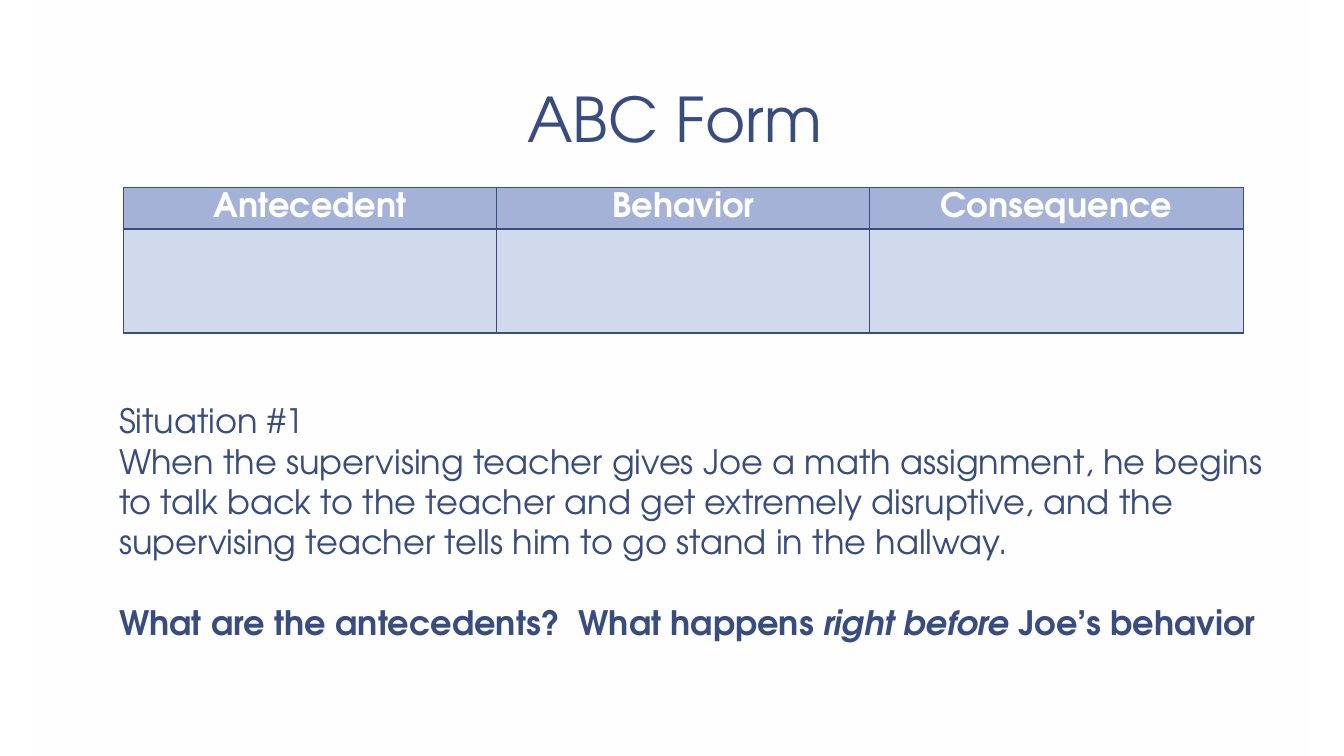
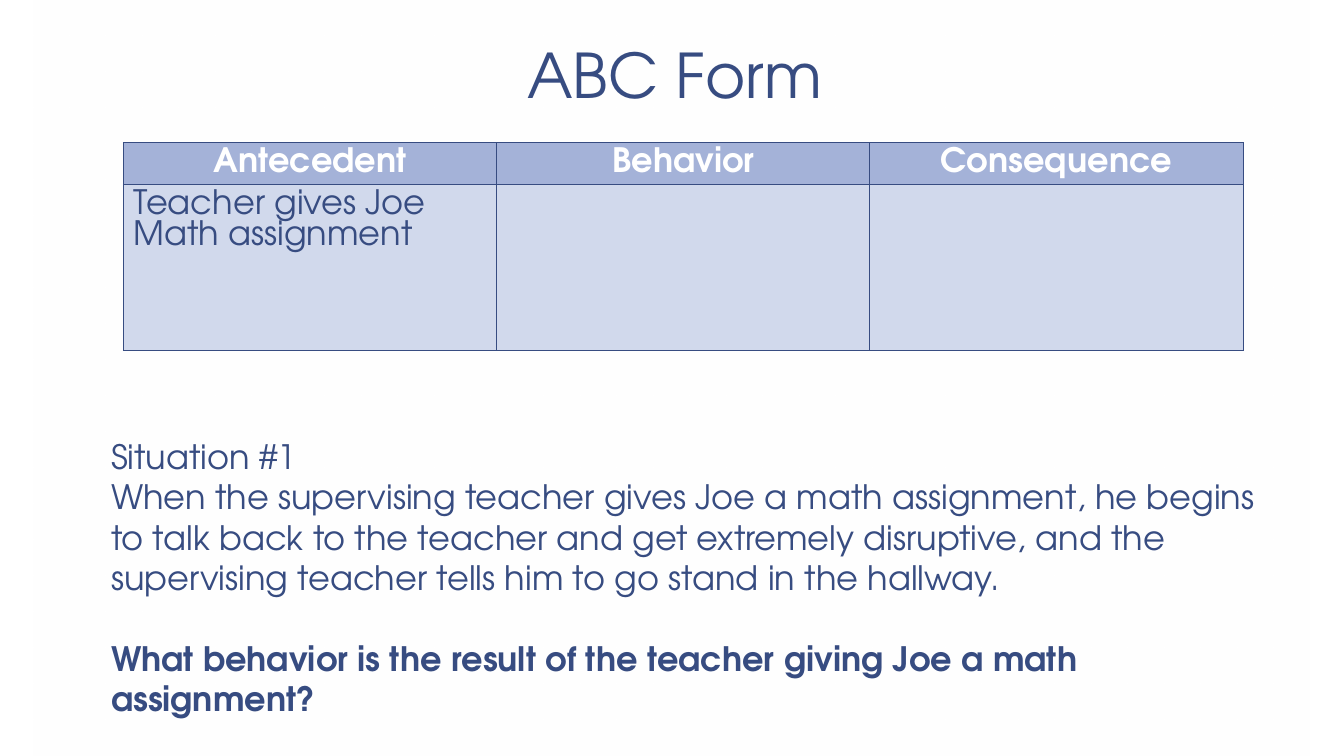
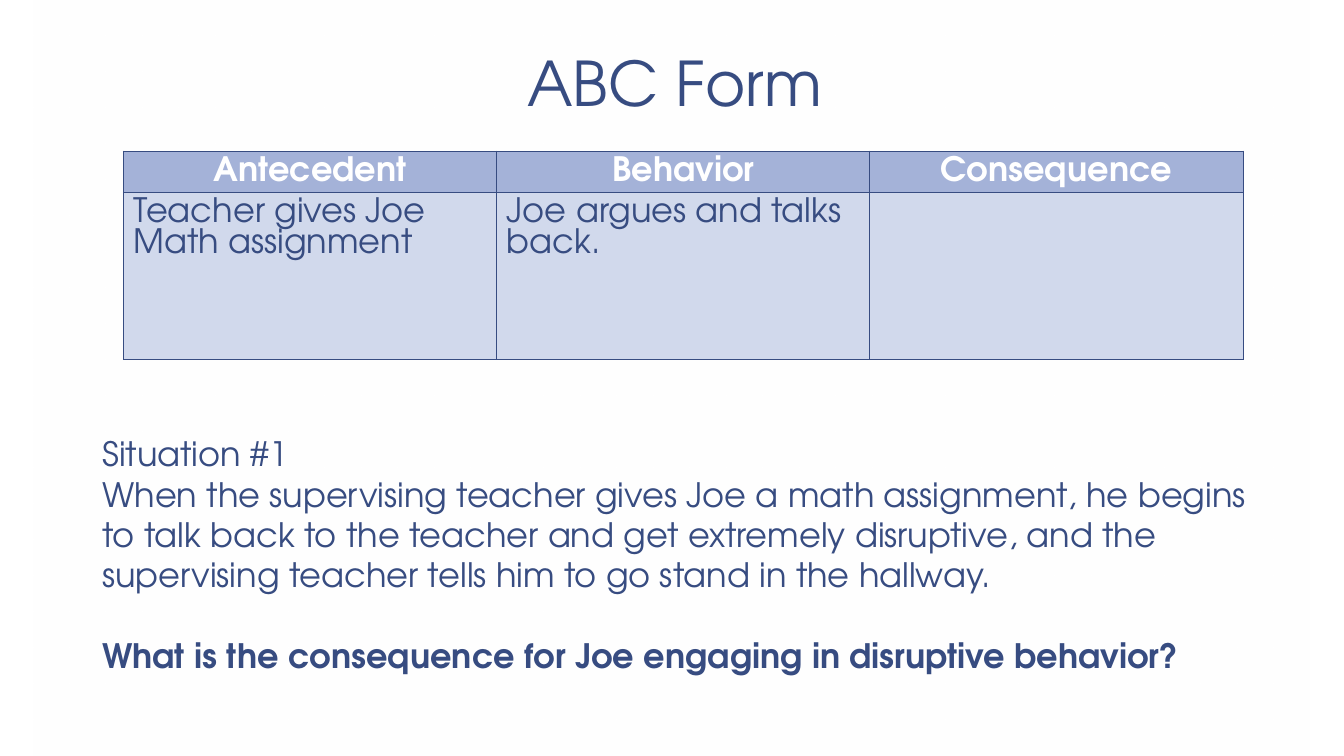
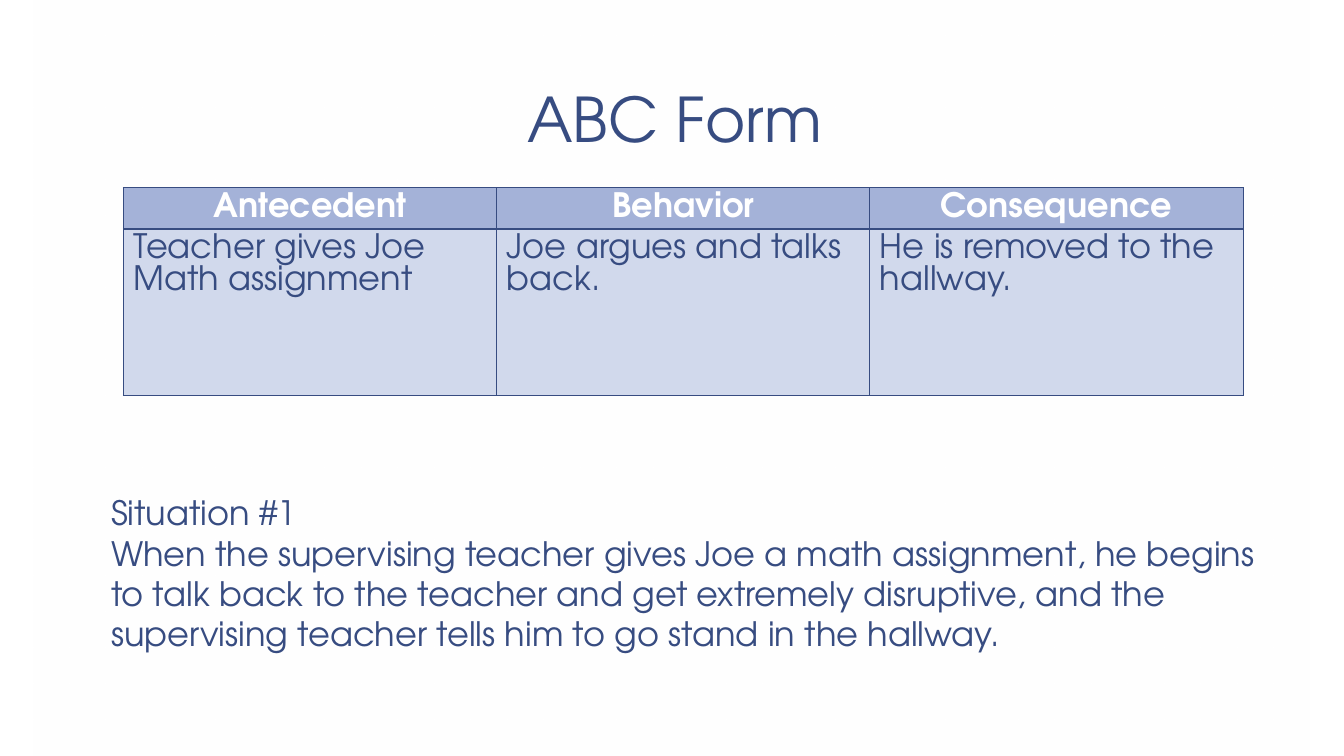
"""Build four slides that fill in an antecedent-behavior-consequence form."""
from lxml import etree
from pptx import Presentation
from pptx.dml.color import RGBColor
from pptx.enum.shapes import MSO_SHAPE
from pptx.enum.text import MSO_ANCHOR, PP_ALIGN
from pptx.oxml.ns import qn
from pptx.util import Cm, Pt

CENTER = PP_ALIGN.CENTER
LEFT = PP_ALIGN.LEFT
BOTTOM = MSO_ANCHOR.BOTTOM
RECTANGLE = MSO_SHAPE.RECTANGLE

FONT = "TeX Gyre Adventor"
NAVY, WHITE = "374C81", "FFFFFF"
HEADER_FILL, ANSWER_FILL = "A4B2D8", "D1D9EC"

PAGE_WIDTH, PAGE_HEIGHT = 33.87, 19.05
PANEL_LEFT, PANEL_WIDTH = 0.84, 32.16
FORM_LEFT, FORM_WIDTH = 3.11, 28.22
TITLE_TOP, TITLE_GAP = 0.21, 0.63
HEADER_HEIGHT = 1.04
STORY_WIDTH, STORY_HEIGHT = 30.05, 8.46

HEADINGS = ["Antecedent", "Behavior", "Consequence"]
ANSWERS = [
    ["Teacher gives Joe", "Math assignment"],
    ["Joe argues and talks back."],
    ["He is removed to the hallway."],
]
STORY = [
    "Situation #1",
    "When the supervising teacher gives Joe a math assignment, he begins to talk "
    "back to the teacher and get extremely disruptive, and the supervising teacher "
    "tells him to go stand in the hallway.",
]
PAGES = [
    {
        "title_height": 3.89, "answer_height": 2.62, "answered": 0,
        "story_at": (2.75, 9.96),
        "question": [
            ("What are the antecedents?  What happens ", False),
            ("right before", True),
            (" Joe’s behavior", False),
        ],
    },
    {
        "title_height": 2.76, "answer_height": 4.2, "answered": 1,
        "story_at": (2.55, 10.86),
        "question": [
            ("What behavior is the result of the teacher giving Joe a math "
             "assignment?", False),
        ],
    },
    {
        "title_height": 2.97, "answer_height": 4.2, "answered": 2,
        "story_at": (2.33, 10.79),
        "question": [
            ("What is the consequence for Joe engaging in disruptive behavior?", False),
        ],
    },
    {
        "title_height": 3.89, "answer_height": 4.2, "answered": 3,
        "story_at": (2.55, 12.28),
        "question": [],
    },
]


def color(value):
    """Turn a hex string into a colour."""
    return RGBColor.from_string(value)


def add_span(para, text, size=24, ink=NAVY, bold=False, italic=False):
    """Add one formatted run to a paragraph."""
    span = para.add_run()
    span.text = text
    span.font.name = FONT
    span.font.size = Pt(size)
    span.font.bold = bold
    span.font.italic = italic
    span.font.color.rgb = color(ink)


def next_para(frame, index):
    """Return the first paragraph of a frame, or add a further one."""
    return frame.add_paragraph() if index else frame.paragraphs[0]


def add_master_panel(deck, page):
    """Put the fading white panel behind everything on the slide master."""
    panel = page.shapes.add_shape(
        RECTANGLE, Cm(PANEL_LEFT), 0, Cm(PANEL_WIDTH), Cm(PAGE_HEIGHT))
    panel.shadow.inherit = False
    panel.line.fill.background()
    panel.fill.gradient()
    panel.fill.gradient_angle = 230
    for stop in panel.fill.gradient_stops:
        stop.color.rgb = color(WHITE)
    last_color = list(panel._element.iter(qn("a:srgbClr")))[-1]
    etree.SubElement(last_color, qn("a:alpha"), val="55000")
    deck.slide_master.shapes._spTree.insert(2, panel._element)


def add_title(page, height):
    """Place the title so that its text sits at the bottom of its box."""
    title = page.shapes.title
    title.left, title.top = Cm(FORM_LEFT), Cm(TITLE_TOP)
    title.width, title.height = Cm(FORM_WIDTH), Cm(height)
    frame = title.text_frame
    frame.vertical_anchor = BOTTOM
    frame.margin_left = frame.margin_right = Cm(0.33)
    frame.margin_top = frame.margin_bottom = Cm(0.18)
    para = frame.paragraphs[0]
    para.alignment = CENTER
    para.line_spacing = 0.85
    add_span(para, "ABC Form ", size=44)


def style_cell(cell, fill):
    """Give a cell its borders and fill."""
    properties = cell._tc.get_or_add_tcPr()
    for side in ("a:lnL", "a:lnR", "a:lnT", "a:lnB"):
        line = etree.SubElement(properties, qn(side), w=str(Pt(1)))
        solid = etree.SubElement(line, qn("a:solidFill"))
        etree.SubElement(solid, qn("a:srgbClr"), val=NAVY)
    cell.fill.solid()
    cell.fill.fore_color.rgb = color(fill)


def fill_cell(cell, lines, fill, ink, alignment, bold):
    """Style a cell and write its lines."""
    style_cell(cell, fill)
    for index, text in enumerate(lines):
        para = next_para(cell.text_frame, index)
        para.alignment = alignment
        add_span(para, text, ink=ink, bold=bold)


def add_form(page, top, answer_height, answered):
    """Place the form with its headings and the answers given so far."""
    frame = page.shapes.add_table(
        2, len(HEADINGS), Cm(FORM_LEFT), Cm(top),
        Cm(FORM_WIDTH), Cm(HEADER_HEIGHT + answer_height))
    form = frame.table
    form.horz_banding = False
    form.rows[0].height = Cm(HEADER_HEIGHT)
    form.rows[1].height = Cm(answer_height)
    for index, heading in enumerate(HEADINGS):
        answer = ANSWERS[index] if index < answered else []
        fill_cell(form.cell(0, index), [heading], HEADER_FILL, WHITE, CENTER, True)
        fill_cell(form.cell(1, index), answer, ANSWER_FILL, NAVY, LEFT, False)


def add_story(page, left, top, question):
    """Place the situation and, one line below, the question about it."""
    height = min(STORY_HEIGHT, PAGE_HEIGHT - top)
    box = page.shapes.add_textbox(Cm(left), Cm(top), Cm(STORY_WIDTH), Cm(height))
    frame = box.text_frame
    frame.word_wrap = True
    for index, text in enumerate(STORY):
        add_span(next_para(frame, index), text)
    if question:
        para = frame.add_paragraph()
        para.space_before = Pt(28.8)
        for text, italic in question:
            add_span(para, text, bold=True, italic=italic)


def add_page(deck, title_height, answer_height, answered, story_at, question):
    """Add one slide with title, form and story."""
    page = deck.slides.add_slide(deck.slide_layouts.get_by_name("Title Only"))
    add_title(page, title_height)
    add_form(page, TITLE_TOP + title_height + TITLE_GAP, answer_height, answered)
    add_story(page, *story_at, question)
    return page


def main():
    """Build and save the deck."""
    deck = Presentation()
    deck.slide_width, deck.slide_height = Cm(PAGE_WIDTH), Cm(PAGE_HEIGHT)
    pages = [add_page(deck, **content) for content in PAGES]
    add_master_panel(deck, pages[0])
    deck.save("out.pptx")


if __name__ == "__main__":
    main()
